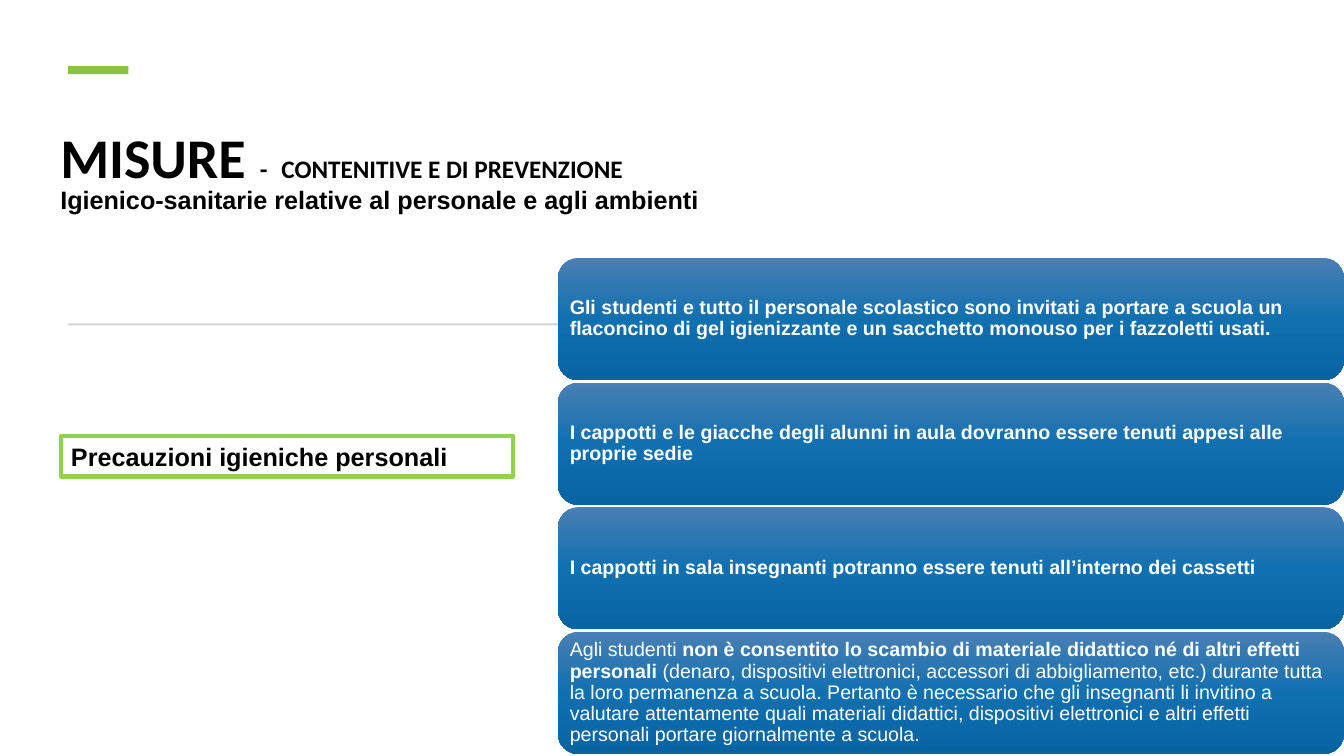
from copy import deepcopy

from pptx import Presentation
from pptx.dml.color import RGBColor
from pptx.enum.shapes import MSO_SHAPE
from pptx.enum.text import MSO_ANCHOR, PP_ALIGN
from pptx.oxml.ns import qn
from pptx.util import Cm, Pt

RECTANGLE = MSO_SHAPE.RECTANGLE
ROUNDED = MSO_SHAPE.ROUNDED_RECTANGLE
MIDDLE = MSO_ANCHOR.MIDDLE
LEFT = PP_ALIGN.LEFT

COLORS = {
    "accent": "8BC145",
    "rule": "D5D5D5",
    "frame": "92D050",
    "text": "000000",
    "card_text": "FFFFFF",
    "card_top": "497FB4",
    "card_middle": "1170B0",
    "card_bottom": "0863A1",
}


def color(name):
    return RGBColor.from_string(COLORS[name])


def add_block(kind, left, top, width, height, fill=None):
    block = page.shapes.add_shape(kind, Cm(left), Cm(top), Cm(width), Cm(height))
    block.shadow.inherit = False
    block.line.fill.background()
    if fill:
        block.fill.solid()
        block.fill.fore_color.rgb = color(fill)
    else:
        block.fill.background()
    return block


deck = Presentation()
deck.slide_width = Cm(33.87)
deck.slide_height = Cm(19.05)
page = deck.slides.add_slide(deck.slide_layouts[6])

add_block(RECTANGLE, 1.72, 1.67, 1.52, 0.2, "accent")
add_block(RECTANGLE, 1.72, 8.15, 17.27, 0.05, "rule")

label = add_block(RECTANGLE, 1.54, 10.98, 11.4, 1.03)
label.line.color.rgb = color("frame")
label.line.width = Pt(3)
label.text_frame.text = "Precauzioni igieniche personali"
label.text_frame.vertical_anchor = MIDDLE
para = label.text_frame.paragraphs[0]
para.alignment = LEFT
para.font.name = "Arial"
para.font.size = Pt(18)
para.font.bold = True
para.font.color.rgb = color("text")

cards = [
    [("Gli studenti e tutto il personale scolastico sono invitati a portare a scuola un "
      "flaconcino di gel igienizzante e un sacchetto monouso per i fazzoletti usati.", True)],
    [("I cappotti e le giacche degli alunni in aula dovranno essere tenuti appesi alle "
      "proprie sedie", True)],
    [("I cappotti in sala insegnanti potranno essere tenuti all’interno dei cassetti", True)],
    [("Agli studenti ", False),
     ("non è consentito lo scambio di materiale didattico né di altri effetti personali ", True),
     ("(denaro, dispositivi elettronici, accessori di abbigliamento, etc.) durante tutta "
      "la loro permanenza a scuola. Pertanto è necessario che gli insegnanti li invitino a "
      "valutare attentamente quali materiali didattici, dispositivi elettronici e altri effetti "
      "personali portare giornalmente a scuola.", False)],
]
gradient = [(0, "card_top"), (0.5, "card_middle"), (1, "card_bottom")]

for row, spans in enumerate(cards):
    card = add_block(ROUNDED, 14.06, 6.5 + row * 3.14, 19.81, 3.08)
    card.adjustments[0] = 0.167
    card.fill.gradient()
    card.fill.gradient_angle = 270
    stop_list = card._element.spPr.find(qn("a:gradFill")).find(qn("a:gsLst"))
    stop_list.append(deepcopy(stop_list[0]))
    for stop, (position, name) in zip(card.fill.gradient_stops, gradient):
        stop.position = position
        stop.color.rgb = color(name)

    frame = card.text_frame
    frame.word_wrap = True
    frame.vertical_anchor = MIDDLE
    frame.margin_left = frame.margin_right = Cm(0.15)
    frame.margin_top = frame.margin_bottom = Cm(0.15)
    para = frame.paragraphs[0]
    para.alignment = LEFT
    para.line_spacing = 0.9
    para.font.name = "Arial"
    para.font.size = Pt(14)
    para.font.color.rgb = color("card_text")
    for text, bold in spans:
        span = para.add_run()
        span.text = text
        span.font.bold = bold

title_lines = [
    ("Calibri", [("MISURE", 40), (" ", 44), ("-", 18), (" ", 44),
                 ("CONTENITIVE E DI PREVENZIONE", 18)]),
    ("Arial", [("Igienico-sanitarie relative al personale e agli ambienti", 18)]),
]
title = page.shapes.add_textbox(Cm(1.27), Cm(3.1), Cm(30.38), Cm(2.5))
frame = title.text_frame
frame.word_wrap = True
frame.vertical_anchor = MIDDLE
for number, (font, spans) in enumerate(title_lines):
    para = frame.add_paragraph() if number else frame.paragraphs[0]
    para.line_spacing = 0.8
    para.font.name = font
    para.font.bold = True
    para.font.color.rgb = color("text")
    for text, size in spans:
        span = para.add_run()
        span.text = text
        span.font.size = Pt(size)

deck.save("out.pptx")
